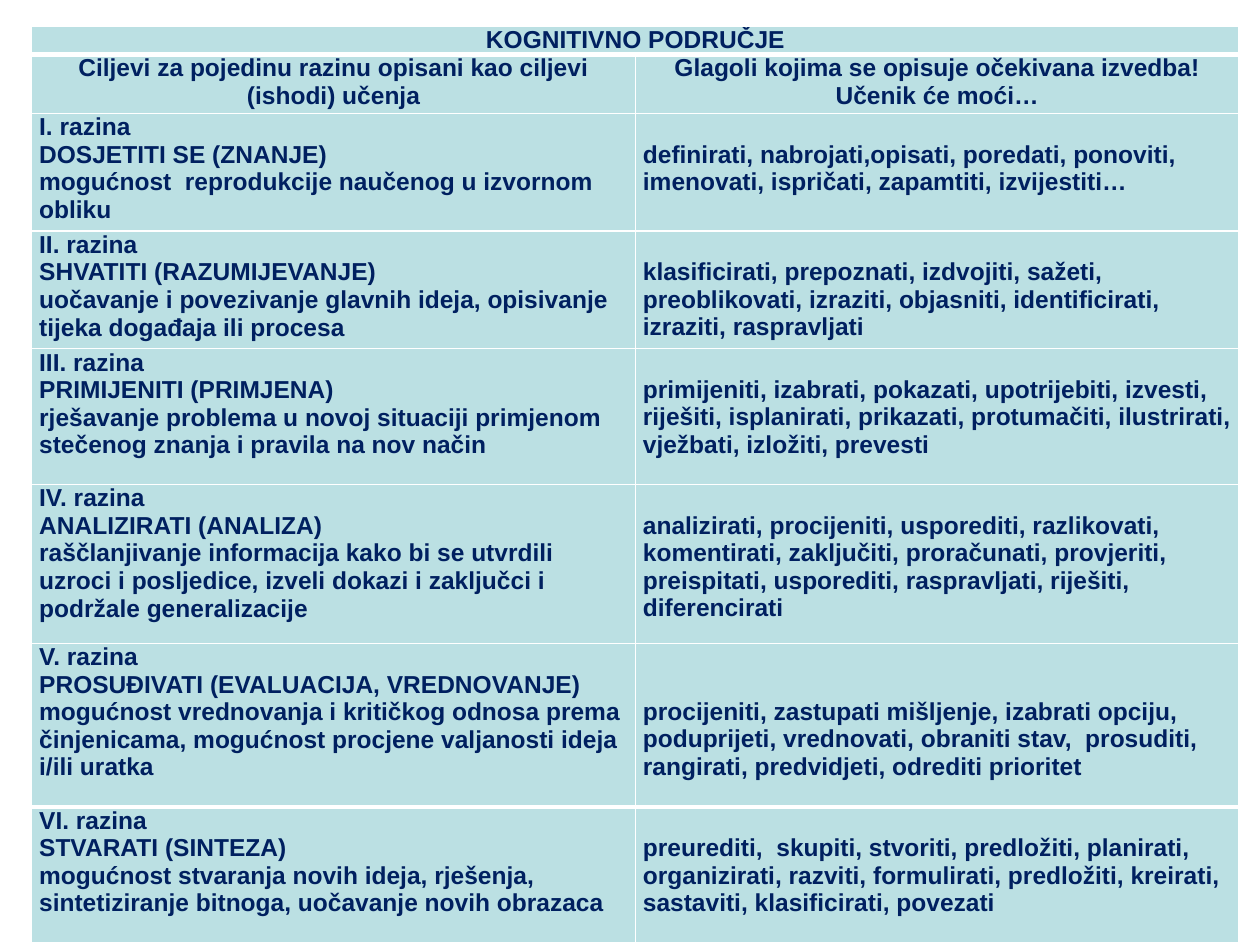
from lxml import etree
from pptx import Presentation
from pptx.dml.color import RGBColor
from pptx.enum import text
from pptx.oxml import ns
from pptx.util import Cm, Pt

NAVY = RGBColor(0x00, 0x20, 0x60)
AQUA = RGBColor(0xBB, 0xE0, 0xE3)
WHITE = RGBColor(0xFF, 0xFF, 0xFF)

HEADING = "KOGNITIVNO PODRUČJE"
COLUMN_HEADINGS = (
    "Ciljevi za pojedinu razinu opisani kao ciljevi (ishodi) učenja",
    "Glagoli kojima se opisuje očekivana izvedba! Učenik će moći…",
)
LEVELS = [
    ("I. razina", "DOSJETITI SE (ZNANJE)",
     "mogućnost  reprodukcije naučenog u izvornom obliku",
     "definirati, nabrojati,opisati, poredati, ponoviti, imenovati, ispričati, "
     "zapamtiti, izvijestiti…"),
    ("II. razina", "SHVATITI (RAZUMIJEVANJE)",
     "uočavanje i povezivanje glavnih ideja, opisivanje tijeka događaja ili procesa",
     "klasificirati, prepoznati, izdvojiti, sažeti, preoblikovati, izraziti, "
     "objasniti, identificirati, izraziti, raspravljati"),
    ("III. razina", "PRIMIJENITI (PRIMJENA)",
     "rješavanje problema u novoj situaciji primjenom stečenog znanja i pravila "
     "na nov način",
     "primijeniti, izabrati, pokazati, upotrijebiti, izvesti, riješiti, isplanirati, "
     "prikazati, protumačiti, ilustrirati, vježbati, izložiti, prevesti"),
    ("IV. razina", "ANALIZIRATI (ANALIZA)",
     "raščlanjivanje informacija kako bi se utvrdili uzroci i posljedice, izveli "
     "dokazi i zaključci i podržale generalizacije",
     "analizirati, procijeniti, usporediti, razlikovati, komentirati, zaključiti, "
     "proračunati, provjeriti, preispitati, usporediti, raspravljati, riješiti, "
     "diferencirati"),
    ("V. razina", "PROSUĐIVATI (EVALUACIJA, VREDNOVANJE)",
     "mogućnost vrednovanja i kritičkog odnosa prema činjenicama, mogućnost "
     "procjene valjanosti ideja i/ili uratka",
     "procijeniti, zastupati mišljenje, izabrati opciju, poduprijeti, vrednovati, "
     "obraniti stav,  prosuditi, rangirati, predvidjeti, odrediti prioritet"),
    ("VI. razina", "STVARATI (SINTEZA)",
     "mogućnost stvaranja novih ideja, rješenja, sintetiziranje bitnoga, uočavanje "
     "novih obrazaca",
     "preurediti,  skupiti, stvoriti, predložiti, planirati, organizirati, razviti, "
     "formulirati, predložiti, kreirati, sastaviti, klasificirati, povezati"),
]
ROW_HEIGHTS = (0.58, 1.19, 2.37, 2.37, 2.74, 3.2, 3.3, 2.74)
COLUMN_WIDTH = 12.17
LINE_HEIGHT = 0.55
THICK_RULES = (1, len(ROW_HEIGHTS) - 1)


def write_cell(cell, paragraphs, alignment=text.PP_ALIGN.LEFT, lines_above=0):
    cell.margin_left = cell.margin_right = Cm(0.15)
    cell.margin_top, cell.margin_bottom = Cm(lines_above * LINE_HEIGHT), 0
    cell.text = "\n".join(paragraphs)
    for paragraph in cell.text_frame.paragraphs:
        paragraph.alignment = alignment
        font = paragraph.runs[0].font
        font.name, font.size, font.bold = "Arial", Pt(14), True
        font.color.rgb = NAVY


def style_cell(cell, top, bottom):
    cell.fill.solid()
    cell.fill.fore_color.rgb = AQUA
    properties = cell._tc.get_or_add_tcPr()
    borders = (("lnL", 1), ("lnR", 1), ("lnT", top), ("lnB", bottom))
    for position, (side, width) in enumerate(borders):
        line = etree.Element(ns.qn(f"a:{side}"), w=str(Pt(width)))
        fill = etree.SubElement(line, ns.qn("a:solidFill"))
        etree.SubElement(fill, ns.qn("a:srgbClr"), val=str(WHITE))
        properties.insert(position, line)


def rule_width(rule):
    return 3 if rule in THICK_RULES else 1


def main():
    presentation = Presentation()
    presentation.slide_width, presentation.slide_height = Cm(25.4), Cm(19.05)
    slide = presentation.slides.add_slide(presentation.slide_layouts[6])
    table = slide.shapes.add_table(
        len(ROW_HEIGHTS), 2, Cm(0.64), Cm(0.52),
        Cm(2 * COLUMN_WIDTH), Cm(sum(ROW_HEIGHTS))).table
    table.first_row = table.horz_banding = False
    for column in table.columns:
        column.width = Cm(COLUMN_WIDTH)
    for row, height in zip(table.rows, ROW_HEIGHTS):
        row.height = Cm(height)

    center = text.PP_ALIGN.CENTER
    table.cell(0, 0).merge(table.cell(0, 1))
    write_cell(table.cell(0, 0), [HEADING], alignment=center)
    for column, heading in enumerate(COLUMN_HEADINGS):
        write_cell(table.cell(1, column), [heading], alignment=center)
    for row, (*goal, verbs) in enumerate(LEVELS, start=2):
        write_cell(table.cell(row, 0), goal)
        write_cell(table.cell(row, 1), [verbs],
                   lines_above=2 if goal[0] == "V. razina" else 1)

    for row in range(len(ROW_HEIGHTS)):
        for column in range(2):
            style_cell(table.cell(row, column), rule_width(row), rule_width(row + 1))
    presentation.save("out.pptx")


if __name__ == "__main__":
    main()
